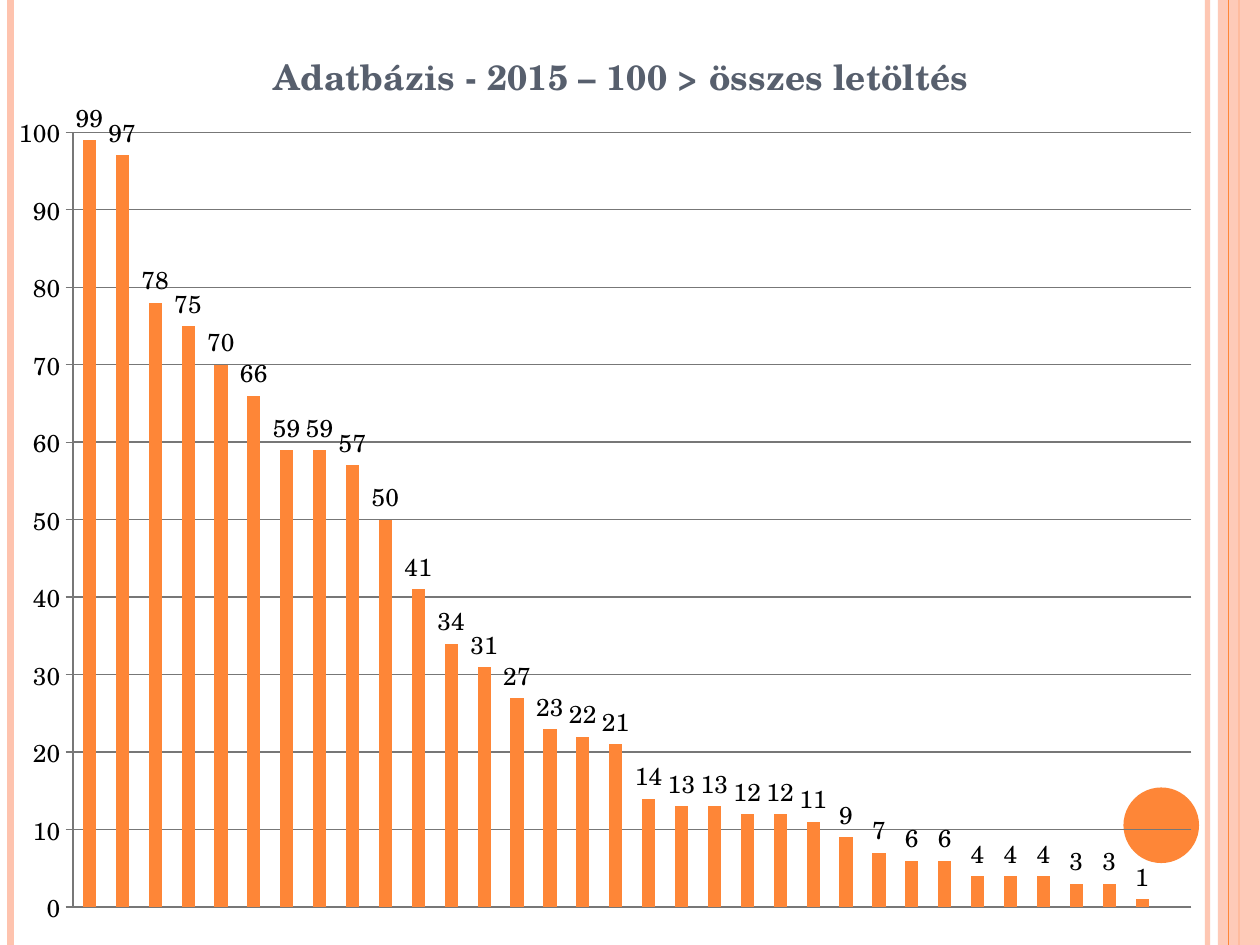
from lxml import etree
from pptx import Presentation
from pptx.chart.data import CategoryChartData
from pptx.dml.color import RGBColor
from pptx.enum.chart import XL_CHART_TYPE, XL_LABEL_POSITION, XL_TICK_MARK
from pptx.enum.shapes import MSO_CONNECTOR, MSO_SHAPE
from pptx.oxml.ns import qn
from pptx.util import Pt

COLUMN = XL_CHART_TYPE.COLUMN_CLUSTERED
OUT_END = XL_LABEL_POSITION.OUTSIDE_END
TICK_OUT, TICK_NONE = XL_TICK_MARK.OUTSIDE, XL_TICK_MARK.NONE
STRAIGHT = MSO_CONNECTOR.STRAIGHT
RECT, OVAL = MSO_SHAPE.RECTANGLE, MSO_SHAPE.OVAL

FONT = "TeX Gyre Schola"
COLORS = {"orange": "FE8637", "peach": "FEC3AE", "slate": "575F6D",
          "grey": "777777", "black": "000000"}
WIDTH, HEIGHT = 720, 540
TITLE = "Adatbázis - 2015 – 100 > összes letöltés"
VALUES = [99, 97, 78, 75, 70, 66, 59, 59, 57, 50, 41, 34, 31, 27, 23, 22, 21,
          14, 13, 13, 12, 12, 11, 9, 7, 6, 6, 4, 4, 4, 3, 3, 1, None]


def rgb(name):
    return RGBColor.from_string(COLORS[name])


def fade(fill, alpha):
    """Set the opacity, in percent, of a solid fill element."""
    color = fill.find(".//" + qn("a:srgbClr"))
    etree.SubElement(color, qn("a:alpha"), val=str(alpha * 1000))


def style(font, size, color="black", bold=False):
    font.name, font.size, font.bold = FONT, Pt(size), bold
    font.color.rgb = rgb(color)


def write(frame, text, **form):
    run = frame.paragraphs[0].add_run()
    run.text = text
    style(run.font, **form)


def stripe(slide, x, weight, color, alpha=100):
    """Draw a line down the full height of the slide."""
    line = slide.shapes.add_connector(STRAIGHT, Pt(x), 0, Pt(x), Pt(HEIGHT))
    line.line.width = Pt(weight)
    line.line.color.rgb = rgb(color)
    props = line._element.spPr
    if alpha < 100:
        fade(props, alpha)
    etree.SubElement(props, qn("a:effectLst"))


def block(slide, kind, x, y, w, h, color, alpha=100):
    shape = slide.shapes.add_shape(kind, Pt(x), Pt(y), Pt(w), Pt(h))
    shape.shadow.inherit = False
    shape.fill.solid()
    shape.fill.fore_color.rgb = rgb(color)
    shape.line.fill.background()
    if alpha < 100:
        fade(shape._element.spPr, alpha)


def place(part, index, **spots):
    """Fix the place of a chart part, in fractions of the chart."""
    old = part.find(qn("c:layout"))
    if old is not None:
        part.remove(old)
    layout = etree.Element(qn("c:layout"))
    part.insert(index, layout)
    manual = etree.SubElement(layout, qn("c:manualLayout"))
    if "w" in spots:
        etree.SubElement(manual, qn("c:layoutTarget"), val="inner")
    for key in ("x", "y"):
        etree.SubElement(manual, qn(f"c:{key}Mode"), val="edge")
    for key, value in spots.items():
        etree.SubElement(manual, qn(f"c:{key}"), val=str(value))


def format_axes(chart):
    chart.category_axis.visible = False
    axis = chart.value_axis
    axis.minimum_scale, axis.maximum_scale, axis.major_unit = 0, 100, 10
    axis.major_tick_mark, axis.minor_tick_mark = TICK_OUT, TICK_NONE
    style(axis.tick_labels.font, 14)
    axis.has_major_gridlines = True
    for line in (axis.format.line, axis.major_gridlines.format.line):
        line.width = Pt(0.75)
        line.color.rgb = rgb("grey")


def format_bars(plot):
    plot.gap_width = 150
    plot.vary_by_categories = False
    fill = plot.series[0].format.fill
    fill.solid()
    fill.fore_color.rgb = rgb("orange")
    plot.has_data_labels = True
    labels = plot.data_labels
    labels.show_value, labels.position = True, OUT_END
    style(labels.font, 14)


def add_bars(slide):
    data = CategoryChartData()
    data.categories = [str(n + 1) for n in range(len(VALUES))]
    data.add_series("Series 1", VALUES)
    chart = slide.shapes.add_chart(
        COLUMN, 0, 0, Pt(694.8), Pt(HEIGHT), data).chart
    chart.has_legend = False
    style(chart.font, 10)
    format_axes(chart)
    format_bars(chart.plots[0])
    chart.has_title = True
    title = chart.chart_title
    write(title.text_frame, TITLE, size=20, color="slate", bold=True)
    title.include_in_layout = False
    place(title._element, 1, x=0.22, y=0.04)
    area = chart._chartSpace.find(".//" + qn("c:plotArea"))
    place(area, 0, x=0.06, y=0.14, w=0.92, h=0.82)


def main():
    deck = Presentation()
    deck.slide_width, deck.slide_height = Pt(WIDTH), Pt(HEIGHT)
    slide = deck.slides.add_slide(deck.slide_layouts[6])
    stripe(slide, 690, 3, "peach", alpha=93)
    stripe(slide, 6, 4.5, "peach")
    stripe(slide, 708, 1.5, "orange")
    block(slide, RECT, 696, 0, 24, HEIGHT, "peach", alpha=87)
    stripe(slide, 702, 0.75, "orange")
    block(slide, OVAL, 642, 450, 43.2, 43.2, "orange")
    add_bars(slide)
    deck.save("out.pptx")


if __name__ == "__main__":
    main()
